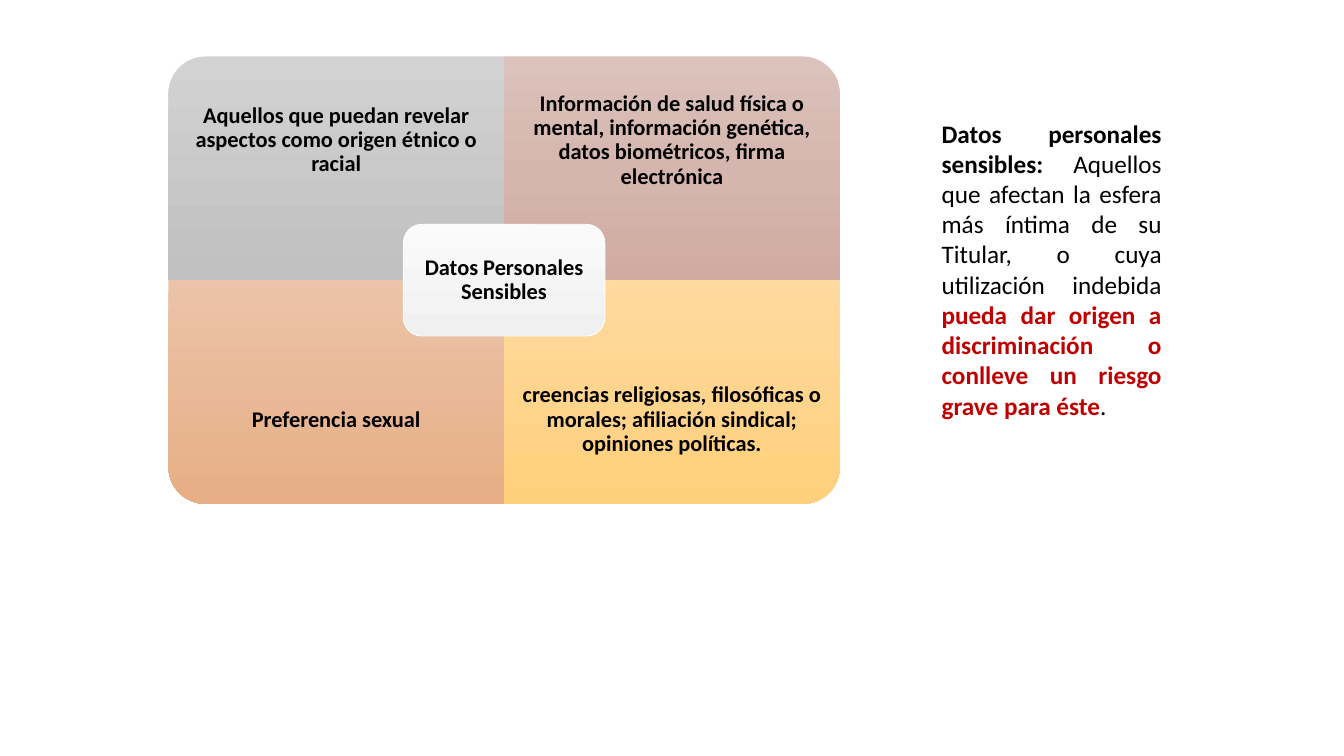
from pptx import Presentation
from pptx.dml.color import RGBColor
from pptx.enum.shapes import MSO_SHAPE as SHAPE
from pptx.enum.text import MSO_ANCHOR as ANCHOR, MSO_AUTO_SIZE as AUTO, PP_ALIGN as ALIGN
from pptx.util import Inches, Pt

CENTER_X, CENTER_Y = 5, 2.78
QUAD_W, QUAD_H = 3.33, 2.22
CAPTION_H = 1.67
HUB_W, HUB_H = 2, 1.11


def write(tf, runs, size=16, align=ALIGN.CENTER, anchor=ANCHOR.MIDDLE, spacing=0.9, inset=0.12):
    """Fill a text frame with one paragraph of (text, bold, colour) runs."""
    tf.word_wrap = True
    tf.vertical_anchor = anchor
    if inset is not None:
        tf.margin_left = tf.margin_right = tf.margin_top = tf.margin_bottom = Inches(inset)
    p = tf.paragraphs[0]
    p.alignment = align
    p.line_spacing = spacing
    for text, bold, color in runs:
        r = p.add_run()
        r.text = text
        r.font.name = "Calibri"
        r.font.size = Pt(size)
        r.font.bold = bold
        r.font.color.rgb = RGBColor.from_string(color)


def add_gradient_shape(kind, x, y, w, h, top, bottom):
    sp = s.shapes.add_shape(kind, Inches(x), Inches(y), Inches(w), Inches(h))
    sp.shadow.inherit = False
    sp.line.fill.background()
    sp.fill.gradient()
    sp.fill.gradient_angle = 270
    for stop, color in zip(sp.fill.gradient_stops, (top, bottom)):
        stop.color.rgb = RGBColor.from_string(color)
    # Keep the shading vertical when the shape is turned
    sp.element.spPr.find("{*}gradFill").set("rotWithShape", "0")
    return sp


prs = Presentation()
prs.slide_width, prs.slide_height = Inches(13.33), Inches(7.5)
s = prs.slides.add_slide(prs.slide_layouts[6])

# Column, row, rotation, top colour, bottom colour, caption
quadrants = [
    (0, 0, 270, "D2D2D2", "C0C0C0",
     "Aquellos que puedan revelar aspectos como origen étnico o racial"),
    (1, 0, 0, "DBC2BB", "D0ABA1",
     "Información de salud física o mental, información genética, datos biométricos, firma electrónica"),
    (0, 1, 180, "EBC3A8", "E7AE86", "Preferencia sexual"),
    (1, 1, 90, "FFD99E", "FFD07C",
     "creencias religiosas, filosóficas o morales; afiliación sindical; opiniones políticas."),
]
for col, row, rotation, top, bottom, caption in quadrants:
    x = CENTER_X + (col - 1) * QUAD_W
    y = CENTER_Y + (row - 1) * QUAD_H
    w, h = (QUAD_H, QUAD_W) if rotation in (90, 270) else (QUAD_W, QUAD_H)
    sp = add_gradient_shape(SHAPE.ROUND_1_RECTANGLE, x + (QUAD_W - w) / 2,
                            y + (QUAD_H - h) / 2, w, h, top, bottom)
    sp.rotation = rotation
    caption_y = y + row * (QUAD_H - CAPTION_H)
    box = s.shapes.add_textbox(Inches(x), Inches(caption_y), Inches(QUAD_W), Inches(CAPTION_H))
    write(box.text_frame, [(caption, True, "000000")])

hub = add_gradient_shape(SHAPE.ROUNDED_RECTANGLE, CENTER_X - HUB_W / 2, CENTER_Y - HUB_H / 2,
                         HUB_W, HUB_H, "FAFAFA", "F0F0F0")
hub.line.color.rgb = RGBColor.from_string("FFFFFF")
hub.line.width = Pt(0.5)
write(hub.text_frame, [("Datos Personales Sensibles", True, "000000")], inset=0.07)

definition = s.shapes.add_textbox(Inches(9.24), Inches(1.12), Inches(2.38), Inches(3.13))
write(definition.text_frame, [
    ("Datos personales sensibles: ", True, "000000"),
    ("Aquellos que afectan la esfera más íntima de su Titular, o cuya utilización indebida ",
     False, "000000"),
    ("pueda dar origen a discriminación o conlleve un riesgo grave para éste", True, "C00000"),
    (".", False, "000000"),
], size=18, align=ALIGN.JUSTIFY, anchor=ANCHOR.TOP, spacing=None, inset=None)
definition.text_frame.auto_size = AUTO.SHAPE_TO_FIT_TEXT

prs.save("out.pptx")
